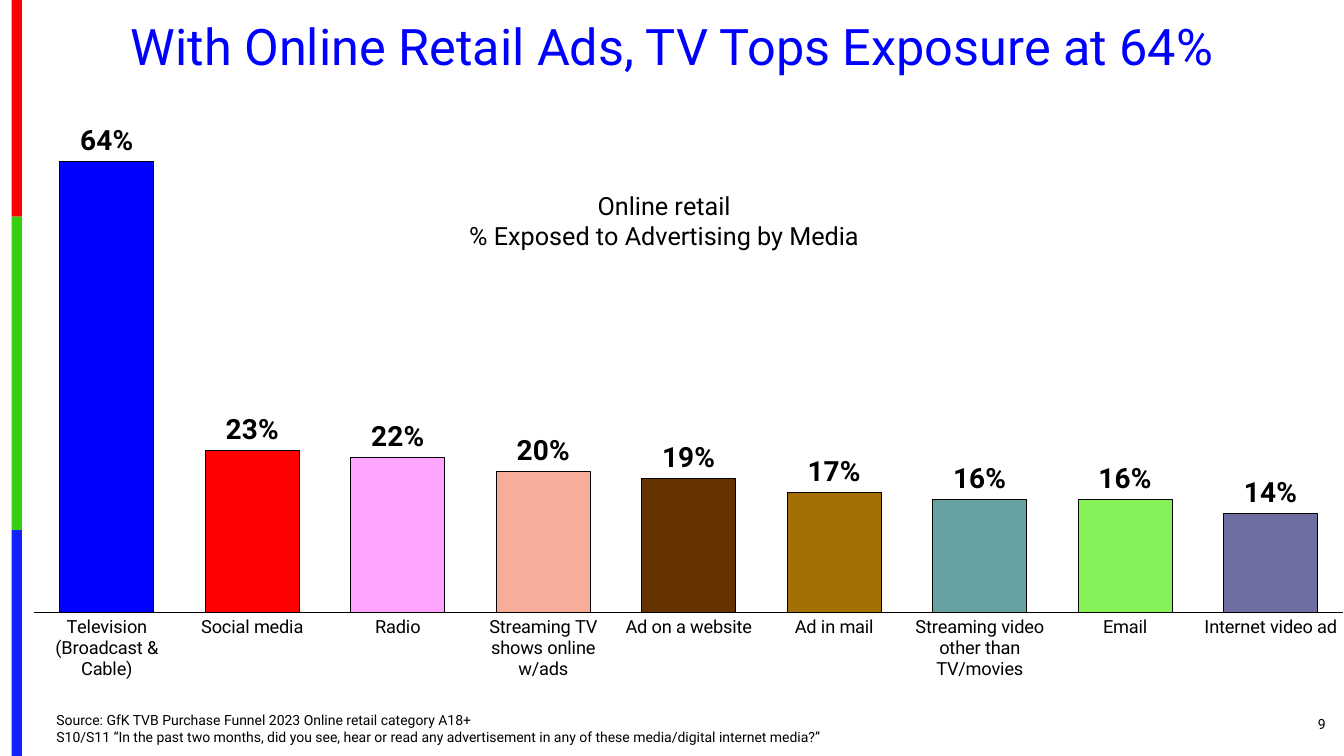
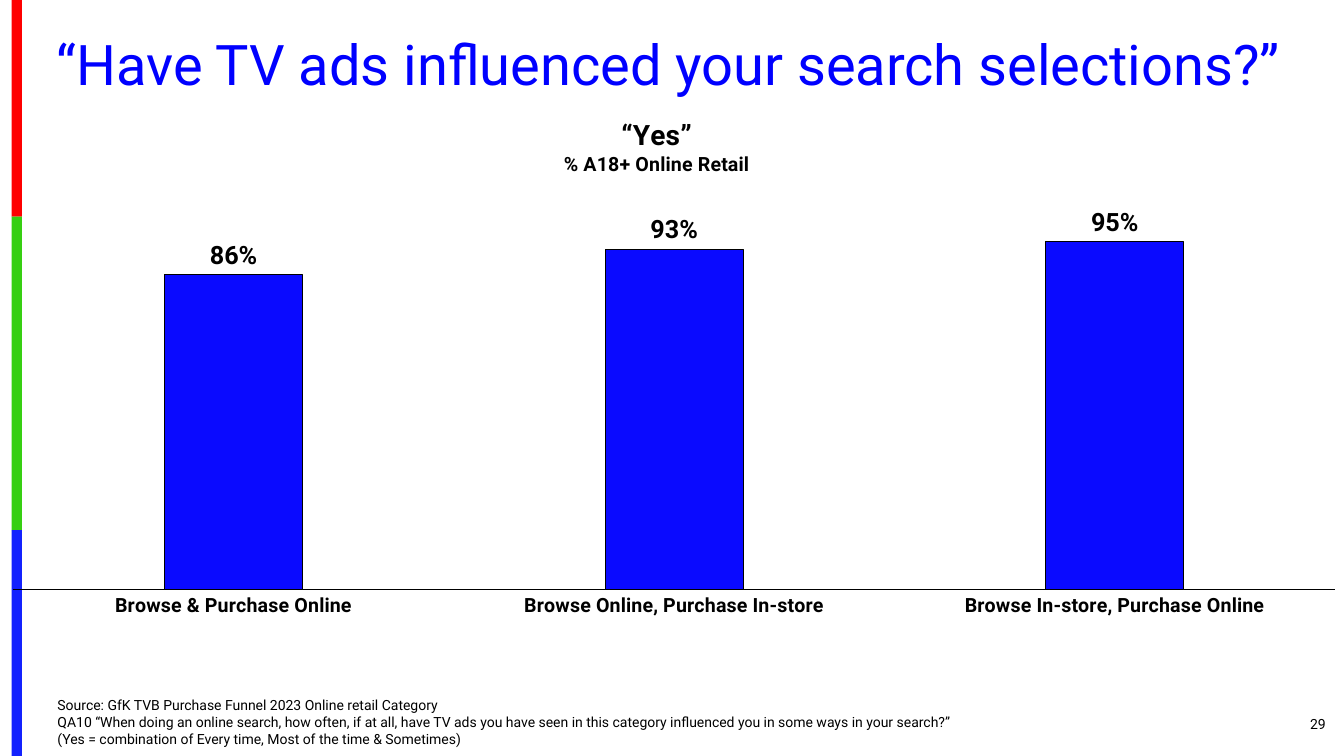
from pptx import Presentation
from pptx.chart.data import CategoryChartData
from pptx.dml.color import RGBColor
from pptx.enum.chart import XL_CHART_TYPE, XL_LABEL_POSITION, XL_TICK_MARK
from pptx.enum.shapes import MSO_SHAPE
from pptx.enum.text import MSO_ANCHOR, MSO_AUTO_SIZE, PP_ALIGN
from pptx.oxml.ns import qn
from pptx.util import Inches, Pt
from lxml.etree import SubElement

FONT = "Roboto"
BLACK = "000000"
TITLE_BLUE = "0000FF"
BANDS = [("FE0000", 21.5), ("36CF12", 31.1), ("1322FE", 22.4)]
color = RGBColor.from_string

deck = Presentation()
deck.slide_width, deck.slide_height = Inches(13.33), Inches(7.5)
column, row = deck.slide_width / 40, deck.slide_height / 75


def cells(*area):
    """Turn left, top, width, height in columns and rows into lengths."""
    return [round(count * unit) for count, unit in zip(area, (column, row, column, row))]


def write(frame, lines, tint=BLACK, bold=False, align=None, spacing=None, plain=False):
    """Fill a text frame with one paragraph for each (text, size) pair."""
    for index, (text, size) in enumerate(lines):
        para = frame.add_paragraph() if index else frame.paragraphs[0]
        if plain:
            settings = para._p.get_or_add_pPr()
            settings.set("marL", "0")
            settings.set("indent", "0")
            SubElement(settings, qn("a:buNone"))
            para.space_before = Pt(0)
        if align is not None:
            para.alignment = align
        if spacing is not None:
            para.line_spacing = spacing
        span = para.add_run()
        span.text = text
        span.font.name, span.font.size, span.font.bold = FONT, Pt(size), bold
        span.font.color.rgb = color(tint)


slides = [
    dict(
        title="With Online Retail Ads, TV Tops Exposure at 64%",
        title_size=36, title_area=(1.38, 1.6, 37.26, 6.5), number="9",
        source=["Source: GfK TVB Purchase Funnel 2023 Online retail category A18+",
                "S10/S11 “In the past two months, did you see, hear or read any "
                "advertisement in any of these media/digital internet media?”"],
        source_area=(1.38, 70, 31.89, 4.4),
        chart_area=(1, 10.1, 39, 57.3), plot=(0, 0.03, 1, 0.86),
        heading=[("Online retail", 18), ("% Exposed to Advertising by Media", 18)],
        heading_at=(0.33, 0.15), heading_bold=False,
        bars=[("Television (Broadcast & Cable)", 0.64, "0000FF"),
              ("Social media", 0.23, "FF0000"),
              ("Radio", 0.22, "FFA4FF"),
              ("Streaming TV shows online w/ads", 0.20, "F6AD99"),
              ("Ad on a website", 0.19, "663200"),
              ("Ad in mail", 0.17, "A46F05"),
              ("Streaming video other than TV/movies", 0.16, "67A1A1"),
              ("Email", 0.16, "84F158"),
              ("Internet video ad", 0.14, "6E6EA2")],
        top=0.7, gap=55, overlap=-30, axis_size=13, axis_bold=False, label_size=20,
    ),
    dict(
        title="“Have TV ads influenced your search selections?”",
        title_size=40, title_area=(1.26, 3.1, 37.26, 7.1), number="29",
        source=["Source: GfK TVB Purchase Funnel 2023 Online retail Category",
                "QA10 “When doing an online search, how often, if at all, have TV ads you "
                "have seen in this category influenced you in some ways in your search?”",
                "(Yes = combination of Every time, Most of the time & Sometimes)"],
        source_area=(1.41, 68.5, 30.63, 6.1),
        chart_area=(0, 10.8, 39.75, 54.2), plot=(0.01, 0.21, 0.99, 0.67),
        heading=[("“Yes”", 20), ("% A18+ Online Retail", 14)],
        heading_at=(0.42, 0.01), heading_bold=True,
        bars=[("Browse & Purchase Online", 0.86, "0A0AFF"),
              ("Browse Online, Purchase In-store", 0.93, "0A0AFF"),
              ("Browse In-store, Purchase Online", 0.95, "0A0AFF")],
        top=1, gap=219, overlap=-27, axis_size=14, axis_bold=True, label_size=18,
    ),
]

for content in slides:
    page = deck.slides.add_slide(deck.slide_layouts[1])
    title, source = page.placeholders
    number = page.shapes.add_textbox(*cells(36.51, 69.8, 3.24, 4))
    for box, area, anchor in (
        (title, content["title_area"], MSO_ANCHOR.MIDDLE),
        (source, content["source_area"], MSO_ANCHOR.BOTTOM),
        (number, (36.51, 69.8, 3.24, 4), MSO_ANCHOR.MIDDLE),
    ):
        box.left, box.top, box.width, box.height = cells(*area)
        box.text_frame.word_wrap = True
        box.text_frame.auto_size = MSO_AUTO_SIZE.NONE
        box.text_frame.vertical_anchor = anchor
    write(title.text_frame, [(content["title"], content["title_size"])],
          tint=TITLE_BLUE, align=PP_ALIGN.CENTER, spacing=0.9)
    write(source.text_frame, [(line, 10) for line in content["source"]], plain=True)
    write(number.text_frame, [(content["number"], 10)], align=PP_ALIGN.RIGHT)

    names, values, fills = zip(*content["bars"])
    data = CategoryChartData(number_format="0%")
    data.categories = names
    data.add_series("Series 1", values)
    chart = page.shapes.add_chart(
        XL_CHART_TYPE.COLUMN_CLUSTERED, *cells(*content["chart_area"]), data).chart
    chart.has_legend = False
    chart.font.name, chart.font.size = FONT, Pt(10)
    chart.font.color.rgb = color(BLACK)

    heading = chart.chart_title
    write(heading.text_frame, content["heading"],
          bold=content["heading_bold"], align=PP_ALIGN.CENTER)
    heading.include_in_layout = False
    plot_area = chart.element.find(".//" + qn("c:plotArea"))
    for parent, position, shares in (
        (heading.element, 1, content["heading_at"]),
        (plot_area, 0, content["plot"]),
    ):
        for old in parent.findall(qn("c:layout")):
            parent.remove(old)
        layout = SubElement(parent, qn("c:layout"))
        parent.insert(position, layout)
        manual = SubElement(layout, qn("c:manualLayout"))
        if parent is plot_area:
            SubElement(manual, qn("c:layoutTarget")).set("val", "inner")
        for side in "xy":
            SubElement(manual, qn(f"c:{side}Mode")).set("val", "edge")
        for side, share in zip("xywh", shares):
            SubElement(manual, qn(f"c:{side}")).set("val", str(share))

    value_axis, category_axis = chart.value_axis, chart.category_axis
    value_axis.minimum_scale, value_axis.maximum_scale = 0, content["top"]
    value_axis.has_major_gridlines = False
    value_axis.visible = False
    category_axis.major_tick_mark = XL_TICK_MARK.NONE
    category_axis.format.line.color.rgb = color(BLACK)
    category_axis.format.line.width = Pt(0.75)

    plot = chart.plots[0]
    plot.gap_width, plot.overlap = content["gap"], content["overlap"]
    plot.vary_by_categories = False
    series = plot.series[0]
    series.invert_if_negative = False
    for index, fill in enumerate(fills):
        bar = series.points[index].format
        bar.fill.solid()
        bar.fill.fore_color.rgb = color(fill)
        bar.line.color.rgb = color(BLACK)
        bar.line.width = Pt(0.75)
    labels = series.data_labels
    labels.show_value = True
    labels.number_format, labels.number_format_is_linked = "0%", False
    labels.position = XL_LABEL_POSITION.OUTSIDE_END
    for font, size, bold in (
        (category_axis.tick_labels.font, content["axis_size"], content["axis_bold"]),
        (labels.font, content["label_size"], True),
    ):
        font.name, font.size, font.bold = FONT, Pt(size), bold
        font.color.rgb = color(BLACK)

# The bands move to the master, so that every slide shows them.
master_tree = deck.slide_master.shapes.element
top = 0
for index, (fill, height) in enumerate(BANDS):
    band = page.shapes.add_shape(MSO_SHAPE.RECTANGLE, *cells(0.35, top, 0.3, height))
    band.shadow.inherit = False
    band.fill.solid()
    band.fill.fore_color.rgb = color(fill)
    band.line.fill.background()
    band.element.nvSpPr.cNvPr.set("id", str(100 + index))
    master_tree.insert(2 + index, band.element)
    top += height

deck.save("out.pptx")
